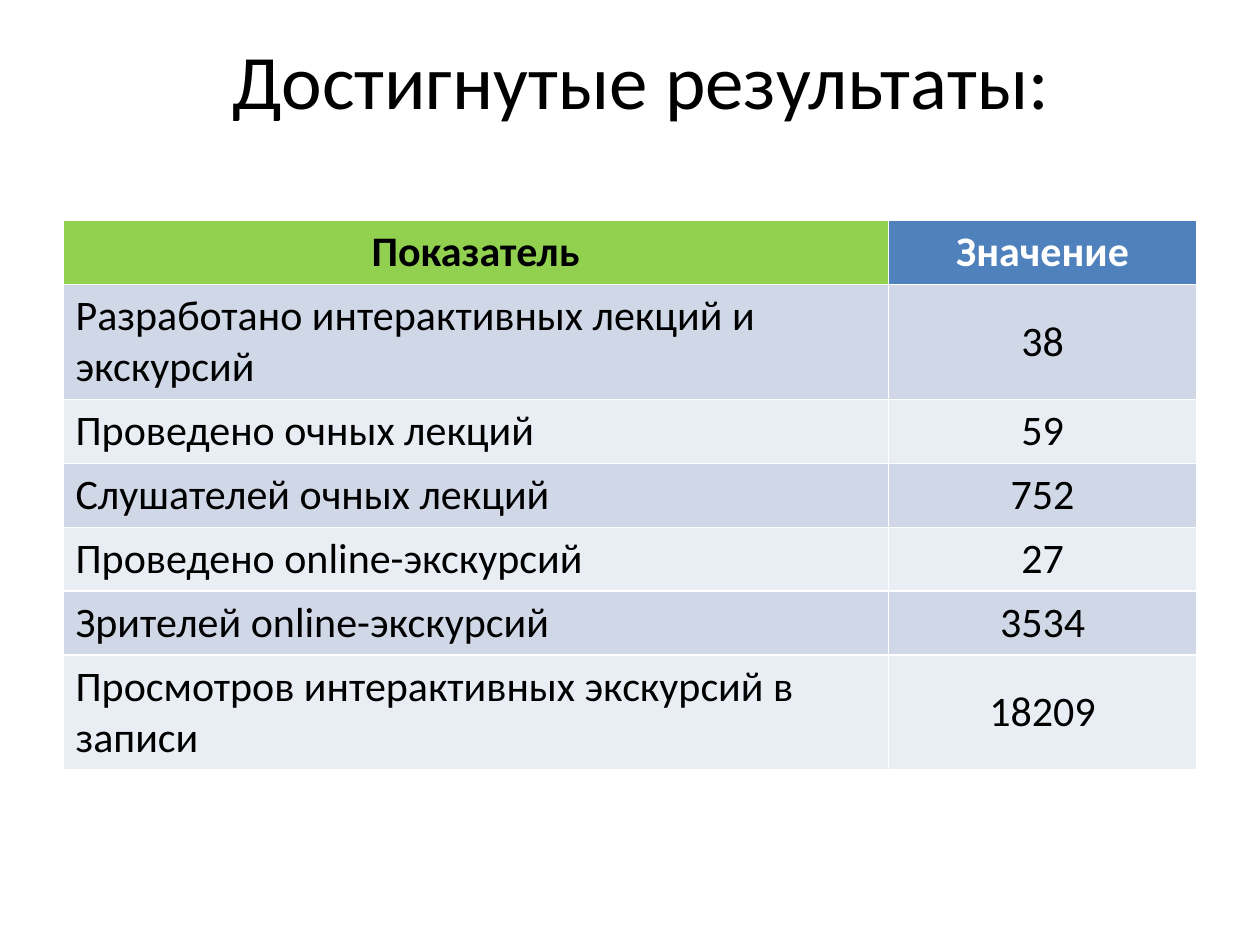
from pptx import Presentation
from pptx import util as u
from pptx.dml.color import RGBColor
from pptx.enum import text


def rgb(value):
    return RGBColor.from_string(value)


def add_text(tf, value, size, color, bold=False, align=text.PP_ALIGN.CENTER):
    p = tf.paragraphs[0]
    p.alignment = align
    r = p.add_run()
    r.text = value
    r.font.name = "Calibri"
    r.font.size = u.Pt(size)
    r.font.bold = bold
    r.font.color.rgb = rgb(color)


prs = Presentation()
prs.slide_width, prs.slide_height = u.Inches(10), u.Inches(7.5)
s = prs.slides.add_slide(prs.slide_layouts[5])

title = s.shapes.title
title.left, title.top = u.Inches(0.59), u.Inches(0)
title.width, title.height = u.Inches(9), u.Inches(1.25)
title.text_frame.vertical_anchor = text.MSO_ANCHOR.MIDDLE
add_text(title.text_frame, "Достигнутые результаты:", 44, "000000")

results = [
    ("Разработано интерактивных лекций и экскурсий", "38"),
    ("Проведено очных лекций", "59"),
    ("Слушателей очных лекций", "752"),
    ("Проведено online-экскурсий", "27"),
    ("Зрителей online-экскурсий", "3534"),
    ("Просмотров интерактивных экскурсий в записи", "18209"),
]
row_height = u.Inches(0.41)
table = s.shapes.add_table(
    len(results) + 1, 2, u.Inches(0.5), u.Inches(1.75),
    u.Inches(9), row_height * (len(results) + 1)).table
for column, width in zip(table.columns, (6.55, 2.45)):
    column.width = u.Inches(width)
for row in table.rows:
    row.height = row_height

headers = [("Показатель", "92D050", "000000"), ("Значение", "4F81BD", "FFFFFF")]
for col, (label, fill, color) in enumerate(headers):
    cell = table.cell(0, col)
    cell.fill.solid()
    cell.fill.fore_color.rgb = rgb(fill)
    add_text(cell.text_frame, label, 24, color, bold=True)

aligns = (text.PP_ALIGN.LEFT, text.PP_ALIGN.CENTER)
for row, values in enumerate(results, start=1):
    for col, value in enumerate(values):
        cell = table.cell(row, col)
        cell.fill.solid()
        cell.fill.fore_color.rgb = rgb("D0D8E8" if row % 2 else "E9EDF4")
        if col == 1:
            cell.vertical_anchor = text.MSO_ANCHOR.MIDDLE
        add_text(cell.text_frame, value, 24, "000000", align=aligns[col])

prs.save("out.pptx")
